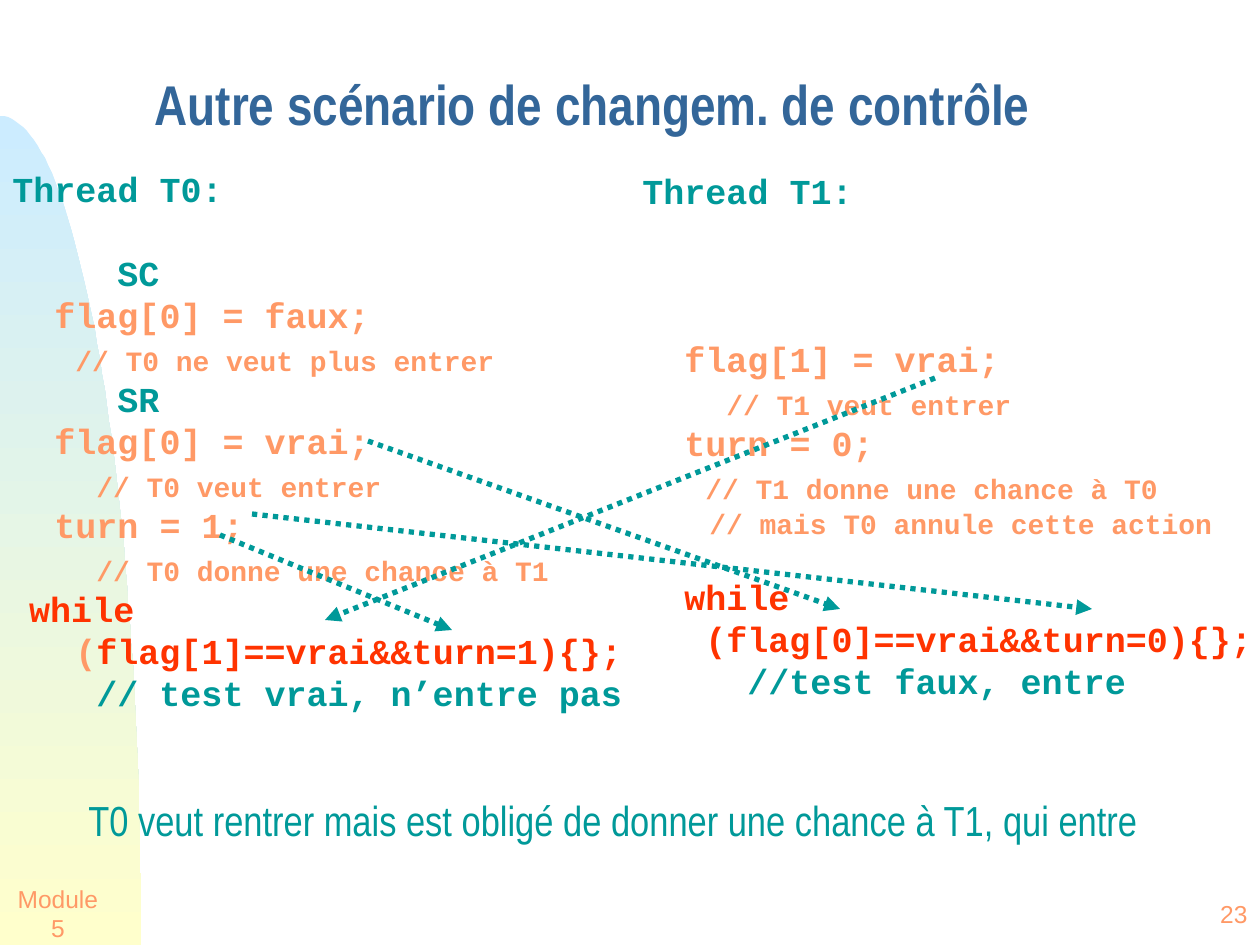
from lxml import etree
from pptx import Presentation
from pptx.dml.color import RGBColor
from pptx.enum.dml import MSO_LINE
from pptx.enum.shapes import MSO_CONNECTOR
from pptx.enum.text import MSO_ANCHOR, MSO_AUTO_SIZE, PP_ALIGN
from pptx.oxml.ns import qn
from pptx.util import Emu, Pt

PX = 914400 / 126
STRAIGHT = MSO_CONNECTOR.STRAIGHT
DOTTED = MSO_LINE.ROUND_DOT
TOP, MIDDLE = MSO_ANCHOR.TOP, MSO_ANCHOR.MIDDLE
LEFT, CENTER, RIGHT = PP_ALIGN.LEFT, PP_ALIGN.CENTER, PP_ALIGN.RIGHT
COLORS = {
    "title": "336699", "teal": "009999", "orange": "FF9966",
    "red": "FF3300", "sky": "CCECFF", "cream": "FFFFCC",
}
CODE, COMMENT = 20, 16  # code text sizes in points
CHAR = 21  # width of one code character in px


def px(value):
    return Emu(round(value * PX))


def color(name):
    return RGBColor.from_string(COLORS[name])


class SlideBuilder:
    def __init__(self, presentation):
        self.slide = presentation.slides.add_slide(presentation.slide_layouts[5])
        self.shapes = self.slide.shapes

    def style(self, font, name, size, color_name, bold=False):
        font.name, font.size, font.bold = name, Pt(size), bold
        font.color.rgb = color(color_name)

    def title(self, text, left, top, width, height):
        shape = self.shapes.title
        shape.left, shape.top = px(left), px(top)
        shape.width, shape.height = px(width), px(height)
        frame = shape.text_frame
        frame.text = text
        frame.auto_size = MSO_AUTO_SIZE.NONE
        frame.vertical_anchor = MIDDLE
        paragraph = frame.paragraphs[0]
        paragraph.alignment, paragraph.line_spacing = LEFT, 0.7
        self.style(paragraph.font, "Arial Narrow", 32, "title", True)

    def text_box(self, left, top, width, height, anchor=TOP, wrap=True):
        box = self.shapes.add_textbox(px(left), px(top), px(width), px(height))
        frame = box.text_frame
        frame.word_wrap, frame.vertical_anchor = wrap, anchor
        return frame

    def label(self, text, bounds, font, size, color_name, align=LEFT, **options):
        frame = self.text_box(*bounds, **options)
        frame.text = text
        paragraph = frame.paragraphs[0]
        paragraph.alignment = align
        self.style(paragraph.font, font, size, color_name)

    def code(self, bounds, lines):
        """Each line: indent in px, size, (text, color) runs, points before, line pitch."""
        frame = self.text_box(*bounds)
        frame.margin_top = px(12)
        for index, (indent, size, runs, before, pitch) in enumerate(lines):
            paragraph = frame.paragraphs[0] if index == 0 else frame.add_paragraph()
            paragraph.line_spacing, paragraph.space_before = Pt(pitch), Pt(before)
            properties = paragraph._p.get_or_add_pPr()
            properties.set("marL", str(px(indent)))
            properties.set("indent", "0")
            self.style(paragraph.font, "Courier New", size, runs[0][1], True)
            for text, color_name in runs:
                run = paragraph.add_run()
                run.text = text
                if color_name != runs[0][1]:
                    run.font.color.rgb = color(color_name)

    def arrow(self, start, end):
        line = self.shapes.add_connector(STRAIGHT, *map(px, start + end))
        line.line.color.rgb = color("teal")
        line.line.width, line.line.dash_style = Pt(3), DOTTED
        etree.SubElement(line.line._get_or_add_ln(), qn("a:tailEnd"), type="triangle")
        etree.SubElement(line._element.spPr, qn("a:effectLst"))

    def gradient_shape(self, points, first, last):
        builder = self.shapes.build_freeform(*points[0], scale=PX)
        builder.add_line_segments(points[1:], close=True)
        shape = builder.convert_to_shape()
        shape.shadow.inherit = False
        shape.line.fill.background()
        shape.fill.gradient()
        shape.fill.gradient_angle = 270
        for stop, position, name in zip(shape.fill.gradient_stops, (0, 1), (first, last)):
            stop.position, stop.color.rgb = position, color(name)


def line(chars, text, color_name="orange", size=CODE, before=0):
    return chars * CHAR, size, [(text, color_name)], before, 24


def comment(chars, text):
    return line(chars, text, size=COMMENT)


def curve(p0, p1, p2, p3, steps=60):
    """Points along a cubic Bézier curve."""
    points = []
    for step in range(steps + 1):
        t = step / steps
        weights = ((1 - t) ** 3, 3 * t * (1 - t) ** 2, 3 * t * t * (1 - t), t ** 3)
        points.append(tuple(
            sum(w * p[axis] for w, p in zip(weights, (p0, p1, p2, p3))) for axis in (0, 1)
        ))
    return points


THREAD_0 = [
    line(0, "Thread T0:", "teal"),
    line(5, "SC", "teal", before=24),
    line(2, "flag[0] = faux;"),
    comment(3, "// T0 ne veut plus entrer"),
    line(5, "SR", "teal"),
    line(2, "flag[0] = vrai;"),
    comment(4, "// T0 veut entrer"),
    line(2, "turn = 1;"),
    comment(4, "// T0 donne une chance à T1"),
    line(0.8, "while", "red"),
    (3 * CHAR, CODE, [("(", "orange"), ("flag[1]==vrai&&turn=1){};", "red")], 0, 24),
    line(4, "// test vrai, n’entre pas", "teal"),
]
THREAD_1 = [
    line(0, "Thread T1:", "teal"),
    line(2, "flag[1] = vrai;", before=72),
    comment(4, "// T1 veut entrer"),
    line(2, "turn = 0;"),
    comment(3, "// T1 donne une chance à T0"),
    (67, COMMENT, [("// mais T0 annule cette action", "orange")], 0, 20),
    line(2, "while", "red", before=20),
    line(3, "(flag[0]==vrai&&turn=0){};", "red"),
    line(5, "//test faux, entre", "teal"),
]
ARROWS = [
    ((252, 514), (1092, 609)),
    ((368, 441), (840, 609)),
    ((220, 535), (452, 630)),
    ((935, 378), (325, 620)),
]


def main():
    presentation = Presentation()
    presentation.slide_width, presentation.slide_height = px(1260), px(945)
    builder = SlideBuilder(presentation)

    # Curved side band
    edge = curve((0, 116), (78, 116), (141, 488), (141, 945))
    builder.gradient_shape(edge + [(0, 945)], "sky", "cream")

    # Footer and title
    builder.label("Module 5", (0, 882, 116, 63), "Arial", 14, "orange", CENTER,
                  anchor=MIDDLE, wrap=False)
    builder.label("23", (1172, 882, 88, 63), "Arial", 14, "orange", RIGHT,
                  anchor=MIDDLE, wrap=False)
    builder.title("Autre scénario de changem. de contrôle", 142, 45, 1086, 132)

    # Code of both threads and conclusion
    builder.code((0, 155, 651, 702), THREAD_0)
    builder.code((630, 157, 672, 585), THREAD_1)
    builder.label("T0 veut rentrer mais est obligé de donner une chance à T1, qui entre",
                  (76, 788, 1110, 63), "Arial Narrow", 24, "teal")

    # Control flow between the assignments and the tests
    for start, end in ARROWS:
        builder.arrow(start, end)

    presentation.save("out.pptx")


if __name__ == "__main__":
    main()
